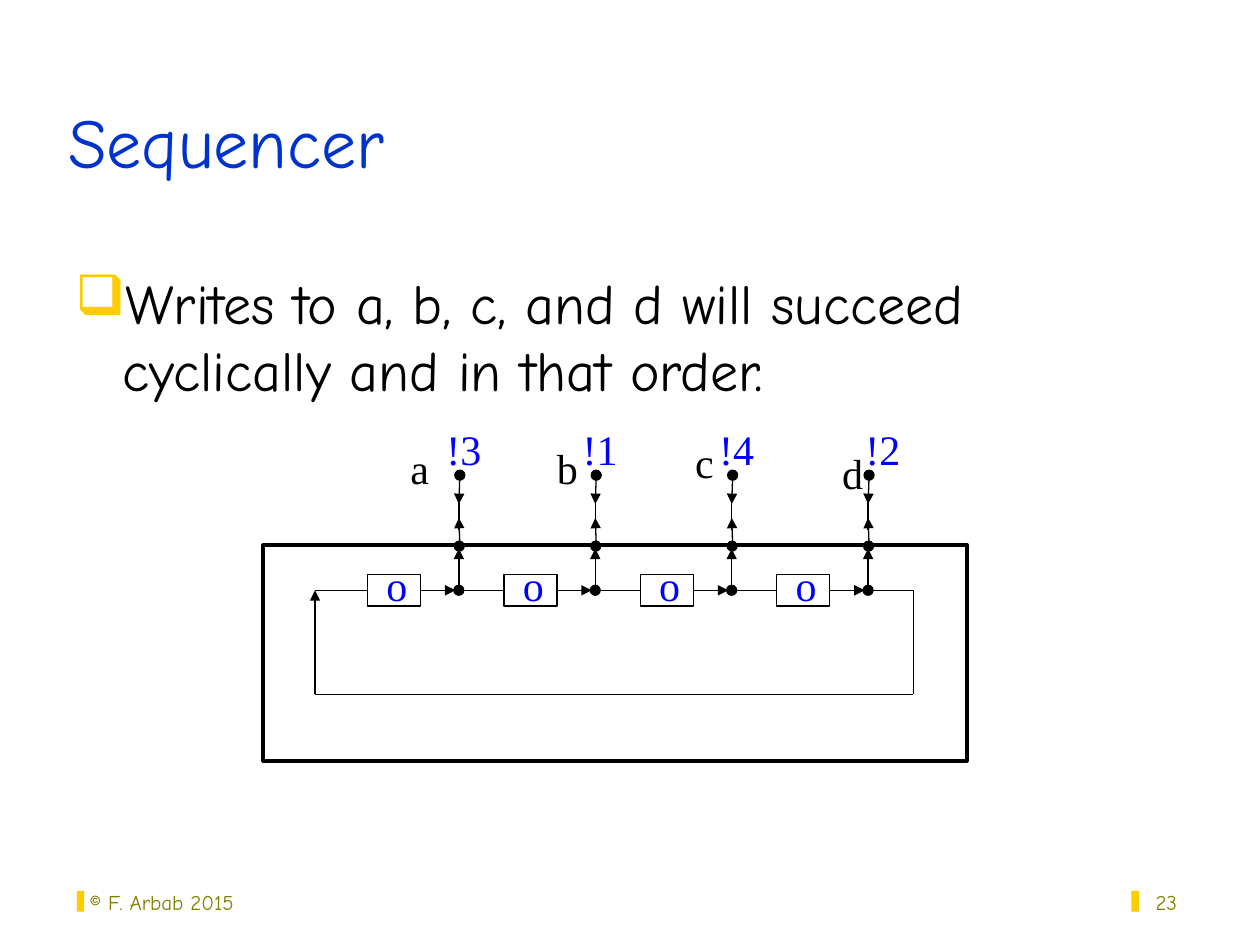
from dataclasses import dataclass

from lxml import etree
from pptx import Presentation
from pptx.dml.color import RGBColor
from pptx.enum.shapes import MSO_CONNECTOR, MSO_SHAPE
from pptx.enum.text import MSO_ANCHOR, MSO_AUTO_SIZE, PP_ALIGN
from pptx.oxml.ns import qn
from pptx.util import Cm, Pt

RECTANGLE, OVAL = MSO_SHAPE.RECTANGLE, MSO_SHAPE.OVAL
STRAIGHT = MSO_CONNECTOR.STRAIGHT
LEFT, CENTER, RIGHT = PP_ALIGN.LEFT, PP_ALIGN.CENTER, PP_ALIGN.RIGHT
TOP, BOTTOM = MSO_ANCHOR.TOP, MSO_ANCHOR.BOTTOM
LEFT_SIDE, RIGHT_SIDE = 1, 3


@dataclass(frozen=True)
class Theme:
    heading_font: str = "Comic Neue"
    diagram_font: str = "Times New Roman"
    bullet_font: str = "OpenSymbol"
    black: str = "000000"
    white: str = "FFFFFF"
    title: str = "0033CC"
    token: str = "0000FF"
    accent: str = "FFCC00"
    footer: str = "808000"
    title_size: int = 40
    body_size: int = 32
    label_size: int = 24
    footer_size: int = 12
    thin: float = 0.75
    thick: float = 2.25


THEME = Theme()

# Port name, its offset from the node (x) and top, then the order token likewise
PORTS = [
    ("a", -0.79, 0.38, "!3", 0.1),
    ("b", -0.57, 0.38, "!1", 0.1),
    ("c", -0.55, 0.27, "!4", 0.1),
    ("d", -0.32, 0.48, "!2", 0.3),
]


def add_text(slide, text, box, font, size, color, align=LEFT, anchor=TOP):
    textbox = slide.shapes.add_textbox(*(Cm(v) for v in box))
    frame = textbox.text_frame
    frame.word_wrap = True
    frame.vertical_anchor = anchor
    paragraph = frame.paragraphs[0]
    paragraph.text = text
    paragraph.alignment = align
    paragraph.font.name = font
    paragraph.font.size = Pt(size)
    paragraph.font.color.rgb = RGBColor.from_string(color)
    return frame


def add_label(slide, text, center, top, color):
    """Unwrapped diagram text centred on a given x."""
    width = 0.91 if len(text) == 1 else 1.24
    frame = add_text(slide, text, (center - width / 2, top, width, 1.27),
                     THEME.diagram_font, THEME.label_size, color, CENTER)
    frame.word_wrap = False
    frame.auto_size = MSO_AUTO_SIZE.SHAPE_TO_FIT_TEXT


def add_box(slide, kind, box, fill, line=None, weight=THEME.thin):
    shape = slide.shapes.add_shape(kind, *(Cm(v) for v in box))
    shape.shadow.inherit = False
    shape.fill.solid()
    shape.fill.fore_color.rgb = RGBColor.from_string(fill)
    if line:
        shape.line.color.rgb = RGBColor.from_string(line)
        shape.line.width = Pt(weight)
    else:
        shape.line.fill.background()
    return shape


def add_dot(slide, x, y):
    size = 0.2
    add_box(slide, OVAL, (x - size / 2, y - size / 2, size, size),
            THEME.black, THEME.black)


def add_wire(slide, start, end, arrow=False):
    wire = slide.shapes.add_connector(STRAIGHT, *(Cm(v) for v in (*start, *end)))
    wire.line.color.rgb = RGBColor.from_string(THEME.black)
    wire.line.width = Pt(THEME.thin)
    properties = wire.line._get_or_add_ln()
    if arrow:
        etree.SubElement(properties, qn("a:tailEnd"), type="triangle")
    etree.SubElement(properties.getparent(), qn("a:effectLst"))
    return wire


def add_title(slide, box):
    add_text(slide, "Sequencer", box, THEME.heading_font, THEME.title_size,
             THEME.title, anchor=BOTTOM)


def add_body(slide, box):
    frame = add_text(
        slide, "Writes to a, b, c, and d will succeed cyclically and in that order.",
        box, THEME.heading_font, THEME.body_size, THEME.black)
    properties = frame.paragraphs[0]._p.get_or_add_pPr()
    properties.set("marL", str(Cm(0.95)))
    properties.set("indent", str(-Cm(0.95)))
    bullet_color = etree.Element(qn("a:buClr"))
    etree.SubElement(bullet_color, qn("a:srgbClr"), val=THEME.accent)
    properties.insert(0, bullet_color)
    properties.insert(1, etree.Element(qn("a:buFont"), typeface=THEME.bullet_font))
    properties.insert(2, etree.Element(qn("a:buChar"), char="❑"))


def add_port(slide, x, top, frame_top):
    """Facing arrows from the outer end down to the frame, with end dots."""
    outer = top + 1.17
    add_wire(slide, (x + 0.02, frame_top), (x, top + 2.03), arrow=True)
    add_wire(slide, (x + 0.02, outer), (x, top + 1.75), arrow=True)
    add_wire(slide, (x, top + 1.59), (x, top + 2.28))
    add_dot(slide, x + 0.02, outer)
    add_dot(slide, x + 0.01, frame_top + 0.02)


def add_sequencer(slide, box):
    """Frame with a loop of four cells; each cell feeds one port above."""
    left, top, width, height = box
    frame_top = top + 2.58
    wire_y = frame_top + 0.91
    loop_left, loop_bottom = left + 1.04, frame_top + 3.01
    first_cell, pitch = left + 2.1, 2.75
    cell_width, cell_height, node_offset = 1.07, 0.64, 1.84
    loop_right = first_cell + len(PORTS) * pitch

    add_box(slide, RECTANGLE, (left, frame_top, width, height - 2.58),
            THEME.white, THEME.black, THEME.thick)
    cells = [
        add_box(slide, RECTANGLE,
                (first_cell + i * pitch, wire_y - cell_height / 2,
                 cell_width, cell_height), THEME.white, THEME.black)
        for i in range(len(PORTS))
    ]

    add_wire(slide, (loop_right, wire_y), (loop_right, loop_bottom))
    add_wire(slide, (loop_right, loop_bottom), (loop_left, loop_bottom))
    add_wire(slide, (loop_left, loop_bottom), (loop_left, wire_y), arrow=True)
    inlet = add_wire(slide, (loop_left, wire_y), (first_cell, wire_y))
    inlet.end_connect(cells[0], LEFT_SIDE)

    for i, (name, name_dx, name_dy, token, token_dx) in enumerate(PORTS):
        cell_left = first_cell + i * pitch
        node = cell_left + node_offset
        feed = add_wire(slide, (cell_left + cell_width, wire_y),
                        (node - 0.07, wire_y), arrow=True)
        feed.begin_connect(cells[i], RIGHT_SIDE)
        onward = add_wire(slide, (node, wire_y), (cell_left + pitch, wire_y))
        if i + 1 < len(cells):
            onward.end_connect(cells[i + 1], LEFT_SIDE)
        add_wire(slide, (node, wire_y), (node, frame_top + 0.07), arrow=True)
        add_dot(slide, node, wire_y)
        add_port(slide, node, top, frame_top)
        add_label(slide, name, node + name_dx, top + name_dy, THEME.black)
        add_label(slide, token, node + token_dx, top, THEME.token)
        add_label(slide, "o", cell_left + cell_width / 2 + 0.05,
                  wire_y - 0.74, THEME.token)


def add_footer(slide, text, box, bar_offset, align):
    left, top, _, _ = box
    add_box(slide, RECTANGLE, (left + bar_offset, top + 0.66, 0.15, 0.42),
            THEME.accent)
    frame = add_text(slide, text, box, THEME.heading_font, THEME.footer_size,
                     THEME.footer, align, BOTTOM)
    if align == LEFT:
        frame.margin_left = Cm(0.62)


def main():
    presentation = Presentation()
    presentation.slide_width, presentation.slide_height = Cm(25.4), Cm(19.05)
    slide = presentation.slides.add_slide(presentation.slide_layouts[6])
    add_title(slide, (1.13, 0.62, 21.59, 3.18))
    add_body(slide, (1.27, 5.29, 22.71, 11.58))
    add_sequencer(slide, (5.31, 8.41, 14.18, 6.93))
    add_footer(slide, "© F. Arbab 2015", (1.19, 17.3, 5.28, 1.27), 0.36, LEFT)
    add_footer(slide, "23", (18.7, 17.3, 5.28, 1.27), 4.11, RIGHT)
    presentation.save("out.pptx")


if __name__ == "__main__":
    main()
